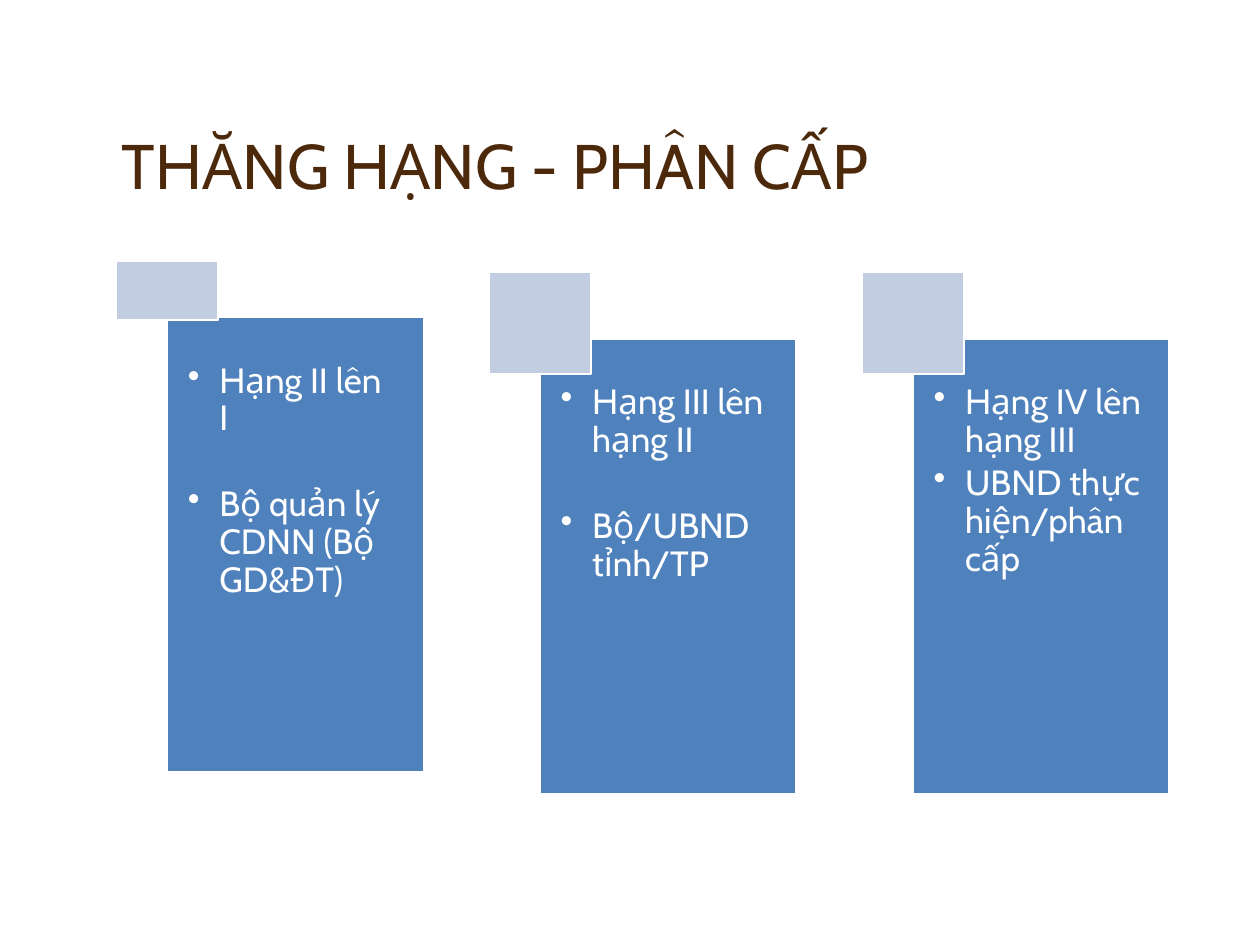
from dataclasses import dataclass

from lxml import etree
from pptx import Presentation
from pptx.dml.color import RGBColor
from pptx.enum.shapes import MSO_SHAPE
from pptx.enum.text import MSO_ANCHOR, PP_ALIGN
from pptx.oxml.ns import qn
from pptx.slide import Slide
from pptx.text.text import _Paragraph
from pptx.util import Pt

RECT = MSO_SHAPE.RECTANGLE
TOP = MSO_ANCHOR.TOP
BOTTOM = MSO_ANCHOR.BOTTOM
LEFT = PP_ALIGN.LEFT

HUES = {"title": "4D290B", "card": "4F81BD", "tab": "C2CDE1", "white": "FFFFFF"}
FONT = "Cabin"
PITCH = 213.1
CARD_X, CARD_W, CARD_H = 95.8, 146.2, 260
TAB_X, TAB_W = 66.2, 58.3
INDENT = 18


@dataclass
class Card:
    top: float
    tab_top: float
    tab_high: float
    gap: float
    items: list[list[str]]


CARDS = [
    Card(181.4, 149, 33.8, 27.4, [["Hạng II lên", "I"], ["Bộ quản lý CDNN (Bộ GD&ĐT)"]]),
    Card(193.7, 155.5, TAB_W, 27.4, [["Hạng III lên hạng II"], ["Bộ/UBND tỉnh/TP"]]),
    Card(193.7, 155.5, TAB_W, 3, [["Hạng IV lên hạng III"], ["UBND thực hiện/phân cấp"]]),
]


def add_run(para: _Paragraph, text: str, size: float, hue: str) -> None:
    run = para.add_run()
    run.text = text
    run.font.name = FONT
    run.font.size = Pt(size)
    run.font.color.rgb = RGBColor.from_string(HUES[hue])


def add_rect(slide: Slide, x: float, y: float, w: float, h: float, hue: str):
    rect = slide.shapes.add_shape(RECT, Pt(x), Pt(y), Pt(w), Pt(h))
    rect.shadow.inherit = False
    rect.fill.solid()
    rect.fill.fore_color.rgb = RGBColor.from_string(HUES[hue])
    rect.line.color.rgb = RGBColor.from_string(HUES["white"])
    rect.line.width = Pt(1)
    return rect


def add_bullet(para: _Paragraph) -> None:
    props = para._p.get_or_add_pPr()
    props.set("marL", str(Pt(INDENT)))
    props.set("indent", str(-Pt(INDENT)))
    etree.SubElement(props, qn("a:buChar")).set("char", "•")


def add_card(slide: Slide, index: int, card: Card) -> None:
    shift = index * PITCH
    body = add_rect(slide, CARD_X + shift, card.top, CARD_W, CARD_H, "card")
    frame = body.text_frame
    frame.word_wrap = True
    frame.vertical_anchor = TOP
    frame.margin_left = frame.margin_right = frame.margin_bottom = Pt(11.5)
    frame.margin_top = Pt(26)
    for row, lines in enumerate(card.items):
        para = frame.add_paragraph() if row else frame.paragraphs[0]
        add_bullet(para)
        para.alignment = LEFT
        para.line_spacing = 0.9
        if row:
            para.space_before = Pt(card.gap)
        for part, text in enumerate(lines):
            if part:
                para.add_line_break()
            add_run(para, text, 20, "white")
    add_rect(slide, TAB_X + shift, card.tab_top, TAB_W, card.tab_high, "tab")


def add_title(slide: Slide, text: str) -> None:
    box = slide.shapes.add_textbox(Pt(62.6), Pt(23.8), Pt(594), Pt(95.8))
    frame = box.text_frame
    frame.word_wrap = True
    frame.vertical_anchor = BOTTOM
    para = frame.paragraphs[0]
    para.line_spacing = 0.9
    add_run(para, text, 36, "title")


def main() -> None:
    deck = Presentation()
    deck.slide_width, deck.slide_height = Pt(720), Pt(540)
    slide = deck.slides.add_slide(deck.slide_layouts[6])
    add_title(slide, "THĂNG HẠNG - PHÂN CẤP")
    for index, card in enumerate(CARDS):
        add_card(slide, index, card)
    deck.save("out.pptx")


if __name__ == "__main__":
    main()
